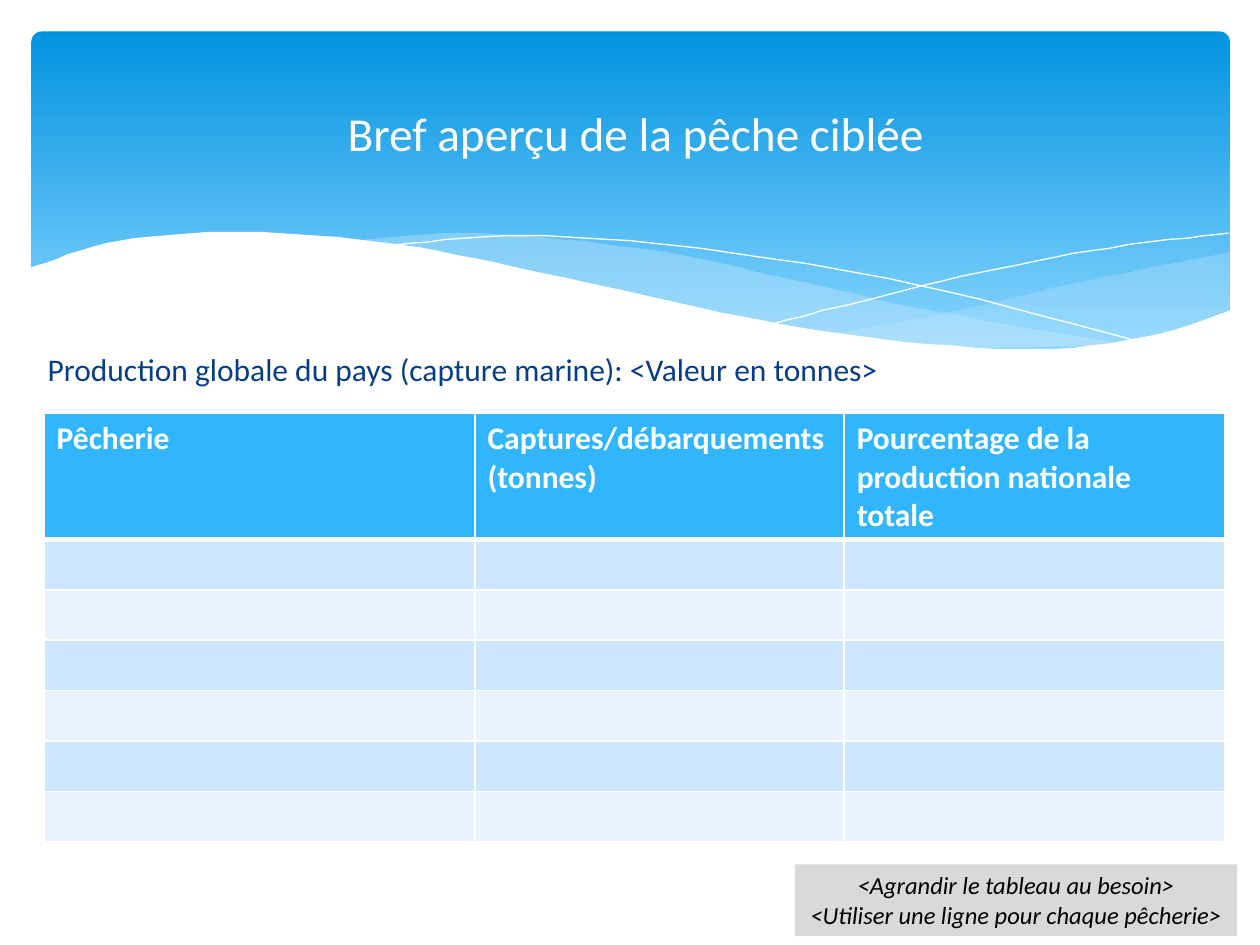
from typing import NamedTuple
from lxml.etree import SubElement
from pptx import Presentation
from pptx.dml.color import RGBColor
from pptx.enum.shapes import MSO_SHAPE
from pptx.enum.text import MSO_ANCHOR, PP_ALIGN
from pptx.oxml.ns import qn
from pptx.util import Inches, Pt

COLORS = {
    "white": "FFFFFF", "black": "000000", "navy": "073E87", "gray": "D9D9D9",
    "top": "0293E0", "base": "83D3FE", "wave": "C6E7FC",
    "head": "31B6FD", "odd": "CEE5FE", "even": "E8F3FF",
}
FONT = "Calibri"
STEPS = 8


class Wave(NamedTuple):
    curves: list
    fill: str = ""
    alpha: int = 100


class Label(NamedTuple):
    lines: list
    size: int
    color: str
    align: PP_ALIGN = PP_ALIGN.LEFT
    bold: bool = False
    italic: bool = False


WAVES = [
    Wave([[(9.76, 2), (8.61, 2.23), (7.53, 2.48), (6.61, 2.65)],
          [(6.61, 2.65), (8.03, 2.78), (9.05, 2.69), (9.76, 2.47)]], "wave", 29),
    Wave([[(8.93, 2.73), (7.41, 2.47), (6.29, 2.22), (5.14, 1.98), (3.8, 1.85), (2.86, 1.91)],
          [(2.86, 1.91), (4.49, 2.22), (6.01, 2.55), (7.36, 2.75), (8.93, 2.73)]], "wave", 40),
    Wave([[(3.09, 1.95), (4.16, 1.87), (5.56, 1.97), (7.27, 2.26), (9.07, 2.72)]]),
    Wave([[(6.13, 2.57), (7.48, 2.23), (8.66, 1.99), (9.75, 1.85)]]),
    Wave([[(9.77, 2.46), (9.1, 2.67), (8.09, 2.77), (6.48, 2.62), (4.47, 2.2),
           (3.16, 1.94), (1.93, 1.84), (0.95, 1.91), (0.23, 2.13)],
          [(0.23, 3.29), (9.77, 3.29)]], "white"),
]


def tint(name: str) -> RGBColor:
    return RGBColor.from_string(COLORS[name])


def paint(item, name: str) -> None:
    item.fill.solid()
    item.fill.fore_color.rgb = tint(name)


def write(frame, label: Label) -> None:
    frame.text = "\n".join(label.lines)
    for para in frame.paragraphs:
        para.alignment = label.align
        for run in para.runs:
            font = run.font
            font.name, font.size = FONT, Pt(label.size)
            font.bold, font.italic = label.bold, label.italic
            font.color.rgb = tint(label.color)


def add_text(slide, box: tuple, label: Label):
    shape = slide.shapes.add_textbox(*map(Inches, box))
    shape.text_frame.word_wrap = True
    write(shape.text_frame, label)
    return shape


def add_panel(slide) -> None:
    panel = slide.shapes.add_shape(
        MSO_SHAPE.ROUNDED_RECTANGLE, *map(Inches, (0.25, 0.25, 9.51, 2.7)))
    panel.adjustments[0] = 0.03
    panel.shadow.inherit = False
    panel.line.fill.background()
    panel.fill.gradient()
    panel.fill.gradient_angle = 270
    for stop, name, place in zip(panel.fill.gradient_stops, ("top", "base"), (0, 0.9)):
        stop.color.rgb = tint(name)
        stop.position = place


def blend(a: float, b: float, c: float, d: float, t: float) -> float:
    bend = (2 * a - 5 * b + 4 * c - d) * t + (3 * b - a - 3 * c + d) * t * t
    return b + t * (c - a + bend) / 2


def smooth(knots: list) -> list:
    ends = [knots[0], *knots, knots[-1]]
    dots = [knots[0]]
    for group in zip(ends, ends[1:], ends[2:], ends[3:]):
        for step in range(1, STEPS + 1):
            dots.append(tuple(blend(*axis, step / STEPS) for axis in zip(*group)))
    return dots


def add_wave(slide, wave: Wave) -> None:
    dots = [(x * 100, y * 100) for curve in wave.curves for x, y in smooth(curve)]
    pen = slide.shapes.build_freeform(*dots[0], scale=Inches(1) / 100)
    pen.add_line_segments(dots[1:], close=bool(wave.fill))
    shape = pen.convert_to_shape()
    shape.shadow.inherit = False
    if not wave.fill:
        shape.fill.background()
        shape.line.color.rgb = tint("white")
        shape.line.width = Pt(0)
        return
    shape.line.fill.background()
    paint(shape, wave.fill)
    if wave.alpha < 100:
        color = shape.fill._xPr.find(qn("a:solidFill"))[0]
        SubElement(color, qn("a:alpha"), val=str(wave.alpha * 1000))


def add_edge(cell, side: str, width: int) -> None:
    edge = SubElement(cell._tc.get_or_add_tcPr(), qn(f"a:ln{side}"), w=str(Pt(width)))
    fill = SubElement(edge, qn("a:solidFill"))
    SubElement(fill, qn("a:srgbClr"), val=COLORS["white"])


def add_grid(slide, heads: list, widths: list, count: int) -> None:
    grid = slide.shapes.add_table(
        count + 1, len(heads), *map(Inches, (0.35, 3.28, sum(widths), 0.99 + 0.4 * count))).table
    for col, width in zip(grid.columns, widths):
        col.width = Inches(width)
    for i, row in enumerate(grid.rows):
        row.height = Inches(0.4 if i else 0.99)
        for j, cell in enumerate(row.cells):
            for side in "LRTB":
                thick = (i, side) in ((0, "B"), (1, "T"))
                add_edge(cell, side, 3 if thick else 1)
            paint(cell, ("odd" if i % 2 else "even") if i else "head")
            if i == 0:
                write(cell.text_frame, Label([heads[j]], 18, "white", bold=True))


def main() -> None:
    deck = Presentation()
    deck.slide_width, deck.slide_height = Inches(10), Inches(7.5)
    slide = deck.slides.add_slide(deck.slide_layouts[6])
    add_panel(slide)
    for wave in WAVES:
        add_wave(slide, wave)
    title = add_text(slide, (0.28, 0.37, 9.53, 1.37), Label(
        ["Bref aperçu de la pêche ciblée"], 27, "white", PP_ALIGN.CENTER))
    title.text_frame.vertical_anchor = MSO_ANCHOR.MIDDLE
    add_text(slide, (0.28, 2.73, 9.37, 0.71), Label(
        ["Production globale du pays (capture marine): <Valeur en tonnes>"], 18, "navy"))
    note = add_text(slide, (6.31, 6.86, 3.51, 0.57), Label(
        ["<Agrandir le tableau au besoin>", "<Utiliser une ligne pour chaque pêcherie>"],
        14, "black", PP_ALIGN.CENTER, italic=True))
    note.text_frame.word_wrap = False
    paint(note, "gray")
    add_grid(slide, ["Pêcherie", "Captures/débarquements (tonnes)",
                     "Pourcentage de la production nationale totale"], [3.42, 2.93, 3.02], 6)
    deck.save("out.pptx")


if __name__ == "__main__":
    main()
